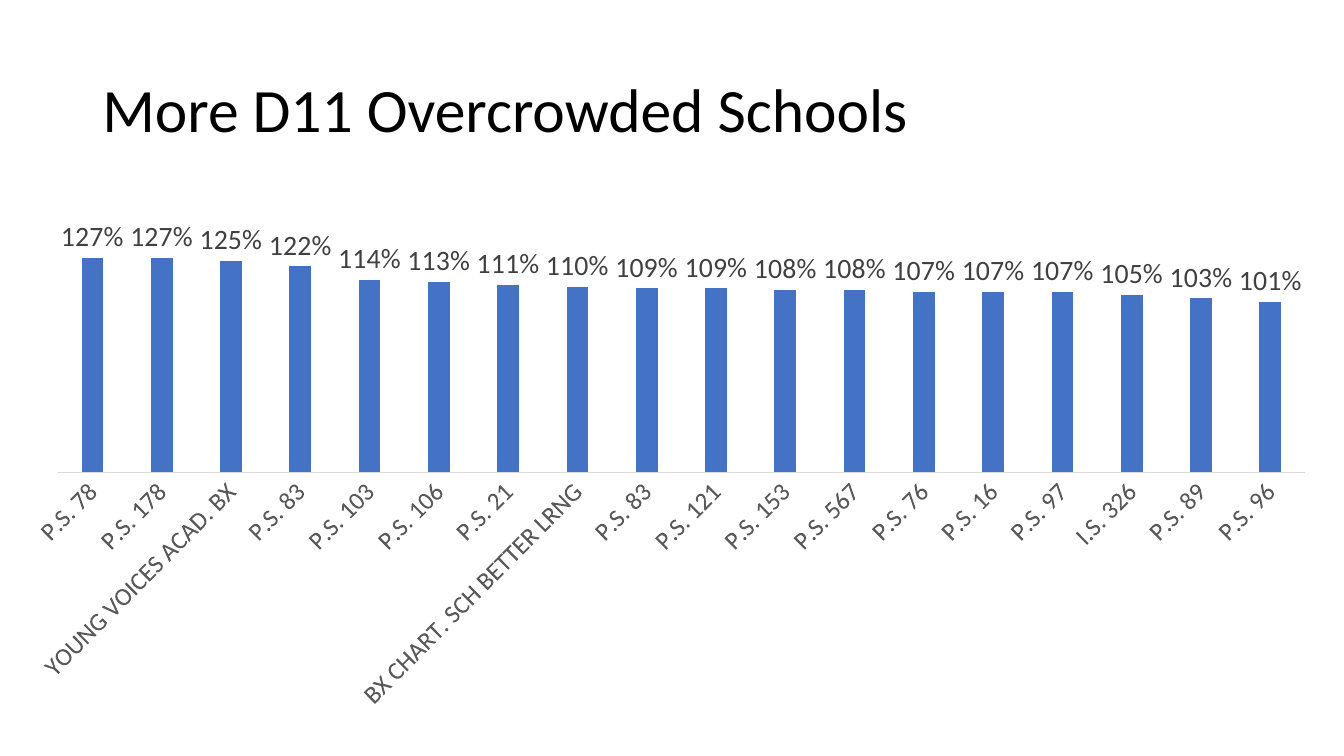
from dataclasses import dataclass
from typing import NamedTuple

from lxml.etree import SubElement
from pptx import Presentation
from pptx.chart.chart import Chart
from pptx.chart.data import CategoryChartData
from pptx.dml.color import RGBColor
from pptx.enum.chart import XL_CHART_TYPE as ChartType
from pptx.enum.chart import XL_LABEL_POSITION as LabelPosition
from pptx.enum.chart import XL_TICK_MARK as TickMark
from pptx.enum.text import MSO_ANCHOR as Anchor
from pptx.oxml.ns import qn
from pptx.slide import Slide
from pptx.text.text import Font
from pptx.util import Emu, Pt

EMU_PER_PX = 9525


@dataclass(frozen=True)
class Theme:
    font: str = "Calibri"
    title: str = "000000"
    bar: str = "4472C4"
    value_label: str = "404040"
    school_label: str = "595959"
    axis_line: str = "D9D9D9"
    title_size: int = 44
    value_size: int = 20
    school_size: int = 18


class Box(NamedTuple):
    left: int
    top: int
    width: int
    height: int

    def emu(self) -> tuple[Emu, ...]:
        return tuple(Emu(length * EMU_PER_PX) for length in self)


class School(NamedTuple):
    name: str
    utilization: float


THEME = Theme()
SLIDE_BOX = Box(0, 0, 1280, 720)
TITLE_BOX = Box(88, 38, 1104, 139)
CHART_BOX = Box(32, 194, 1223, 512)
PLOT_LAYOUT = {"x": 0.01, "y": 0.06, "w": 0.98, "h": 0.44}
LABEL_ROTATION = -45 * 60000

SCHOOLS = [
    School("P.S. 78", 1.27),
    School("P.S. 178", 1.27),
    School("YOUNG VOICES ACAD. BX", 1.25),
    School("P.S. 83", 1.22),
    School("P.S. 103", 1.14),
    School("P.S. 106", 1.13),
    School("P.S. 21", 1.11),
    School("BX CHART. SCH BETTER LRNG", 1.10),
    School("P.S. 83", 1.09),
    School("P.S. 121", 1.09),
    School("P.S. 153", 1.08),
    School("P.S. 567", 1.08),
    School("P.S. 76", 1.07),
    School("P.S. 16", 1.07),
    School("P.S. 97", 1.07),
    School("I.S. 326", 1.05),
    School("P.S. 89", 1.03),
    School("P.S. 96", 1.01),
]


def style_font(font: Font, size: int, color: str) -> None:
    font.name = THEME.font
    font.size = Pt(size)
    font.color.rgb = RGBColor.from_string(color)


def add_title(slide: Slide, text: str) -> None:
    frame = slide.shapes.add_textbox(*TITLE_BOX.emu()).text_frame
    frame.word_wrap = True
    frame.vertical_anchor = Anchor.MIDDLE
    frame.text = text
    paragraph = frame.paragraphs[0]
    paragraph.line_spacing = 0.9
    style_font(paragraph.runs[0].font, THEME.title_size, THEME.title)


def set_plot_layout(chart: Chart) -> None:
    plot_area = chart._chartSpace.chart.plotArea
    for previous in plot_area.findall(qn("c:layout")):
        plot_area.remove(previous)
    layout = SubElement(plot_area, qn("c:layout"))
    plot_area.insert(0, layout)
    manual = SubElement(layout, qn("c:manualLayout"))
    settings = {"layoutTarget": "inner", "xMode": "edge", "yMode": "edge"}
    for tag, value in (settings | PLOT_LAYOUT).items():
        SubElement(manual, qn(f"c:{tag}")).set("val", str(value))


def format_axes(chart: Chart) -> None:
    value_axis = chart.value_axis
    value_axis.visible = False
    value_axis.has_major_gridlines = False
    value_axis.minimum_scale = 0
    value_axis.maximum_scale = 1.4
    value_axis.tick_labels.number_format = "0%"
    value_axis.tick_labels.number_format_is_linked = False

    school_axis = chart.category_axis
    school_axis.major_tick_mark = TickMark.NONE
    school_axis.minor_tick_mark = TickMark.NONE
    school_axis.format.line.width = Pt(0.75)
    school_axis.format.line.color.rgb = RGBColor.from_string(THEME.axis_line)
    style_font(school_axis.tick_labels.font, THEME.school_size, THEME.school_label)
    body = school_axis._element.find(qn("c:txPr")).find(qn("a:bodyPr"))
    body.set("rot", str(LABEL_ROTATION))
    body.set("vert", "horz")


def format_bars(chart: Chart) -> None:
    plot = chart.plots[0]
    plot.vary_by_categories = False
    plot.gap_width = 219
    plot.overlap = -27
    series = plot.series[0]
    series.format.fill.solid()
    series.format.fill.fore_color.rgb = RGBColor.from_string(THEME.bar)
    labels = series.data_labels
    labels.show_value = True
    labels.position = LabelPosition.OUTSIDE_END
    labels.number_format = "0%"
    labels.number_format_is_linked = False
    style_font(labels.font, THEME.value_size, THEME.value_label)


def add_school_chart(slide: Slide, schools: list[School]) -> None:
    data = CategoryChartData(number_format="0%")
    data.categories = [school.name for school in schools]
    data.add_series("Series 1", [school.utilization for school in schools])
    frame = slide.shapes.add_chart(
        ChartType.COLUMN_CLUSTERED, *CHART_BOX.emu(), data
    )
    chart = frame.chart
    chart.has_legend = False
    chart.has_title = False
    style_font(chart.font, 10, THEME.title)
    set_plot_layout(chart)
    format_axes(chart)
    format_bars(chart)


def main() -> None:
    presentation = Presentation()
    _, _, presentation.slide_width, presentation.slide_height = SLIDE_BOX.emu()
    slide = presentation.slides.add_slide(presentation.slide_layouts[6])

    # Title
    add_title(slide, "More D11 Overcrowded Schools")

    # Utilization by school
    add_school_chart(slide, SCHOOLS)

    presentation.save("out.pptx")


if __name__ == "__main__":
    main()
